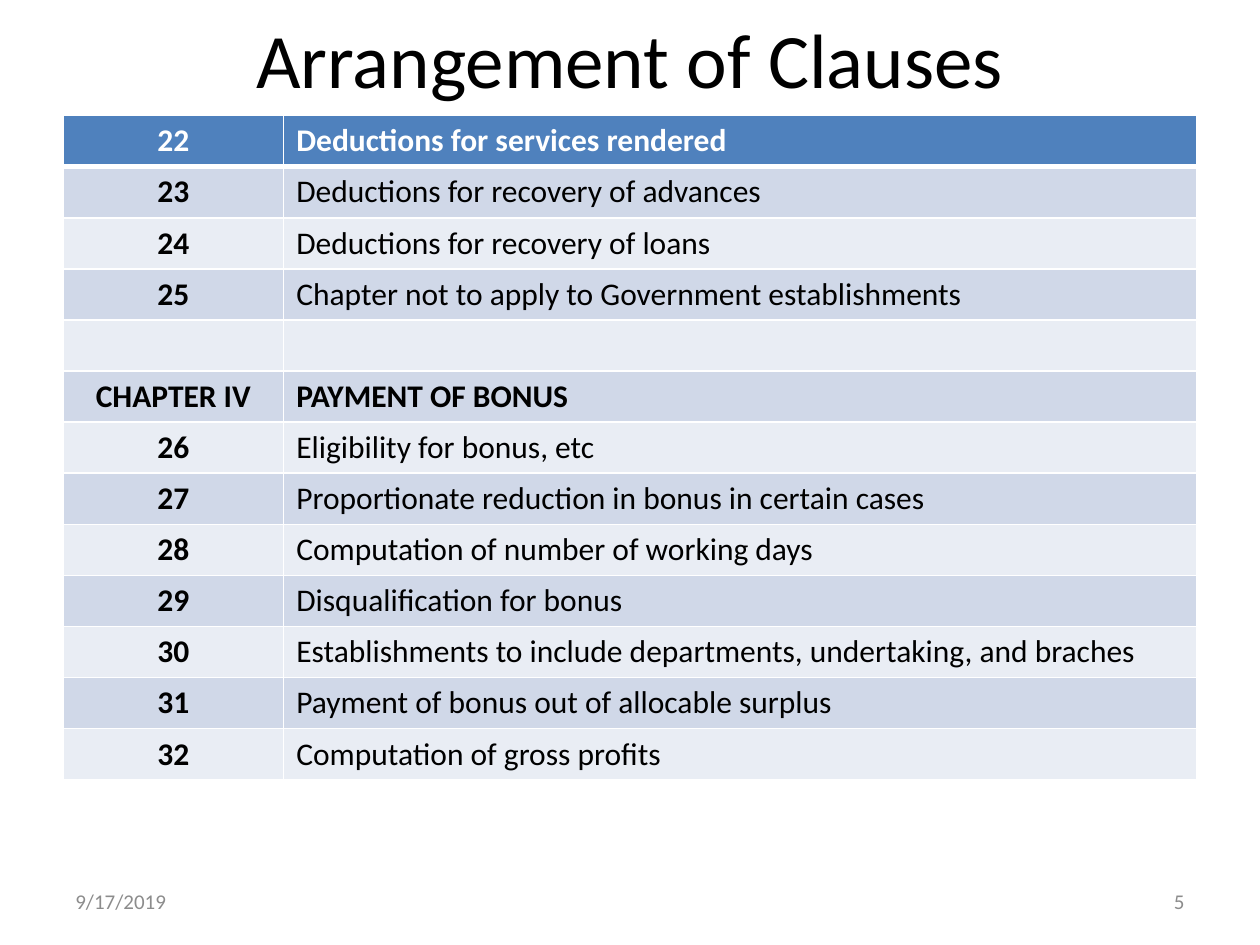
import pptx
import pptx.dml.color
import pptx.enum.text
import pptx.oxml
import pptx.oxml.ns
import pptx.util
from lxml import etree

Cm = pptx.util.Cm
Pt = pptx.util.Pt
ALIGN = pptx.enum.text.PP_ALIGN
MIDDLE = pptx.enum.text.MSO_ANCHOR.MIDDLE


def color(code):
    return pptx.dml.color.RGBColor.from_string(code)


class Page:
    face = "Calibri"
    black = "000000"
    white = "FFFFFF"
    gray = "8C8C8C"
    head = "4F81BD"
    bands = ("E9EDF4", "D0D8E8")

    def __init__(self, slide):
        self.slide = slide

    def style(self, para, size, code, align, bold=False):
        para.alignment = align
        font = para.font
        font.name = self.face
        font.size = Pt(size)
        font.bold = bold
        font.color.rgb = color(code)

    def text(self, words, left, top, width, height, size, code, align):
        box = self.slide.shapes.add_textbox(Cm(left), Cm(top), Cm(width), Cm(height))
        frame = box.text_frame
        frame.word_wrap = True
        frame.vertical_anchor = MIDDLE
        frame.text = words
        self.style(frame.paragraphs[0], size, code, align)

    def border(self, cell, side, width):
        props = cell._tc.get_or_add_tcPr()
        line = etree.SubElement(props, pptx.oxml.ns.qn("a:ln" + side), w=str(Pt(width)))
        fill = etree.SubElement(line, pptx.oxml.ns.qn("a:solidFill"))
        etree.SubElement(fill, pptx.oxml.ns.qn("a:srgbClr"), val=self.white)

    def cell(self, cell, words, row, align, bold):
        for side in "LRTB":
            thick = (row, side) in ((0, "B"), (1, "T"))
            self.border(cell, side, 3 if thick else 1)
        cell.fill.solid()
        cell.fill.fore_color.rgb = color(self.bands[row % 2] if row else self.head)
        cell.text = words
        code = self.black if row else self.white
        self.style(cell.text_frame.paragraphs[0], 18, code, align, bold)

    def table(self, rows, left, top, widths, height):
        frame = self.slide.shapes.add_table(
            len(rows), len(widths), Cm(left), Cm(top),
            Cm(sum(widths)), Cm(height * len(rows)))
        grid = frame.table
        for col, width in zip(grid.columns, widths):
            col.width = Cm(width)
        for i, (mark, title) in enumerate(rows):
            grid.rows[i].height = Cm(height)
            strong = i == 0 or mark.startswith("CHAPTER")
            self.cell(grid.cell(i, 0), mark, i, ALIGN.CENTER, True)
            self.cell(grid.cell(i, 1), title, i, ALIGN.LEFT, strong)


CLAUSES = [
    ("22", "Deductions for services rendered"),
    ("23", "Deductions for recovery of advances"),
    ("24", "Deductions for recovery of loans"),
    ("25", "Chapter not to apply to Government establishments"),
    ("", ""),
    ("CHAPTER IV", "PAYMENT OF BONUS"),
    ("26", "Eligibility for bonus, etc"),
    ("27", "Proportionate reduction in bonus in certain cases"),
    ("28", "Computation of number of working days"),
    ("29", "Disqualification for bonus"),
    ("30", "Establishments to include departments, undertaking, and braches"),
    ("31", "Payment of bonus out of allocable surplus"),
    ("32", "Computation of gross profits"),
]


def main():
    deck = pptx.Presentation()
    deck.slide_width = Cm(25.4)
    deck.slide_height = Cm(19.05)
    page = Page(deck.slides.add_slide(deck.slide_layouts[6]))
    page.text("Arrangement of Clauses", 1.27, 0, 22.86, 2.33, 44, page.black, ALIGN.CENTER)
    page.table(CLAUSES, 1.27, 2.33, (4.45, 18.41), 1.03)
    page.text("9/17/2019", 1.27, 17.66, 5.92, 1.01, 12, page.gray, ALIGN.LEFT)
    page.text("5", 18.21, 17.66, 5.92, 1.01, 12, page.gray, ALIGN.RIGHT)
    deck.save("out.pptx")


if __name__ == "__main__":
    main()
